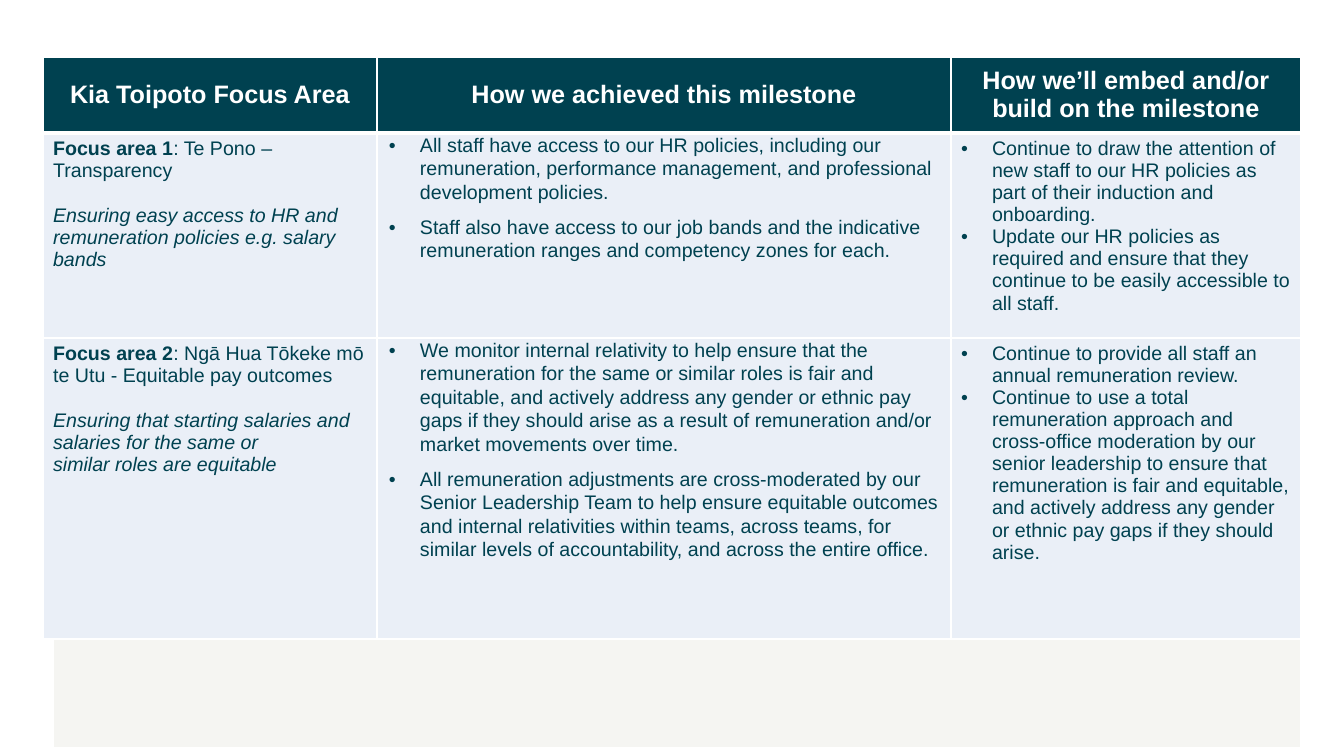
"""Build the Kia Toipoto milestones slide: a three-column table above a pale band."""
from lxml import etree
from pptx import Presentation
from pptx import util as u
from pptx.dml.color import RGBColor
from pptx.enum import shapes, text
from pptx.oxml.ns import qn

PX = 914400 / 100.8
TEAL = RGBColor(0x00, 0x41, 0x50)
WHITE = RGBColor(0xFF, 0xFF, 0xFF)
PALE_BLUE = RGBColor(0xEA, 0xEF, 0xF7)
PALE_GREY = RGBColor(0xF5, 0xF5, 0xF2)

HEADER = {"size": u.Pt(18), "bold": True, "italic": False}
PLAIN = {"size": u.Pt(14), "bold": False, "italic": False}
BOLD = {**PLAIN, "bold": True}
ITALIC = {**PLAIN, "italic": True}
CENTRED = {"alignment": text.PP_ALIGN.CENTER}
AFTER_GAP = {"space_before": u.Pt(16)}
LOOSE = {"line_spacing": 1.07, "space_after": u.Pt(8)}

COLUMN_WIDTHS = [334, 574, 350]
ROW_HEIGHTS = [76, 205, 301]
HEADINGS = [
    "Kia Toipoto Focus Area",
    "How we achieved this milestone",
    "How we’ll embed and/or build on the milestone",
]
FOCUS_AREAS = [
    {
        "name": "Focus area 1",
        "title": ": Te Pono – Transparency",
        "aims": ["Ensuring easy access to HR and remuneration policies e.g. salary bands"],
        "achieved": [
            "All staff have access to our HR policies, including our remuneration, "
            "performance management, and professional development policies.",
            "Staff also have access to our job bands and the indicative remuneration "
            "ranges and competency zones for each.",
        ],
        "next": [
            "Continue to draw the attention of new staff to our HR policies as part of "
            "their induction and onboarding.",
            "Update our HR policies as required and ensure that they continue to be "
            "easily accessible to all staff.",
        ],
    },
    {
        "name": "Focus area 2",
        "title": ": Ngā Hua Tōkeke mō te Utu - Equitable pay outcomes",
        "aims": [
            "Ensuring that starting salaries and salaries for the same or",
            "similar roles are equitable",
        ],
        "achieved": [
            "We monitor internal relativity to help ensure that the remuneration for the "
            "same or similar roles is fair and equitable, and actively address any gender "
            "or ethnic pay gaps if they should arise as a result of remuneration and/or "
            "market movements over time.",
            "All remuneration adjustments are cross-moderated by our Senior Leadership "
            "Team to help ensure equitable outcomes and internal relativities within "
            "teams, across teams, for similar levels of accountability, and across the "
            "entire office.",
        ],
        "next": [
            "Continue to provide all staff an annual remuneration review.",
            "Continue to use a total remuneration approach and cross-office moderation by "
            "our senior leadership to ensure that remuneration is fair and equitable, and "
            "actively address any gender or ethnic pay gaps if they should arise.",
        ],
    },
]


def px(length):
    return u.Emu(round(length * PX))


def write_cell(cell, paragraphs, colour, bulleted=False):
    for index, (runs, layout) in enumerate(paragraphs):
        frame = cell.text_frame
        paragraph = frame.add_paragraph() if index else frame.paragraphs[0]
        if bulleted:
            properties = paragraph._p.get_or_add_pPr()
            properties.set("marL", str(px(31)))
            properties.set("indent", str(-px(31)))
            etree.SubElement(properties, qn("a:buFont"), typeface="Arial")
            etree.SubElement(properties, qn("a:buChar"), char="•")
        for name, value in layout.items():
            setattr(paragraph, name, value)
        for words, style in runs:
            run = paragraph.add_run()
            run.text = words
            for name, value in {"name": "Arial", **style}.items():
                setattr(run.font, name, value)
            run.font.color.rgb = colour


presentation = Presentation()
presentation.slide_width = px(1344)
presentation.slide_height = px(756)
slide = presentation.slides.add_slide(presentation.slide_layouts[6])

band = slide.shapes.add_shape(
    shapes.MSO_SHAPE.RECTANGLE, px(54), px(631), px(1246), px(116))
band.shadow.inherit = False
band.fill.solid()
band.fill.fore_color.rgb = PALE_GREY
band.line.fill.background()

table = slide.shapes.add_table(
    len(ROW_HEIGHTS), len(COLUMN_WIDTHS), px(43), px(57),
    px(sum(COLUMN_WIDTHS)), px(sum(ROW_HEIGHTS))).table
for column, width in zip(table.columns, COLUMN_WIDTHS):
    column.width = px(width)
for row, height in zip(table.rows, ROW_HEIGHTS):
    row.height = px(height)

for row_index, row in enumerate(table.rows):
    for cell in row.cells:
        cell.fill.solid()
        cell.fill.fore_color.rgb = PALE_BLUE if row_index else TEAL
        thick_side = {0: "lnB", 1: "lnT"}.get(row_index)
        properties = cell._tc.get_or_add_tcPr()
        for position, side in enumerate(["lnL", "lnR", "lnT", "lnB"]):
            width = u.Pt(3 if side == thick_side else 1)
            border = etree.Element(qn(f"a:{side}"), w=str(width))
            fill = etree.SubElement(border, qn("a:solidFill"))
            etree.SubElement(fill, qn("a:srgbClr"), val=str(WHITE))
            properties.insert(position, border)

for cell, heading in zip(table.rows[0].cells, HEADINGS):
    cell.vertical_anchor = text.MSO_ANCHOR.MIDDLE
    write_cell(cell, [([(heading, HEADER)], CENTRED)], WHITE)

for row_index, area in enumerate(FOCUS_AREAS, start=1):
    focus_cell, achieved_cell, next_cell = table.rows[row_index].cells
    focus = [([(area["name"], BOLD), (area["title"], PLAIN)], {})]
    focus += [([(aim, ITALIC)], {} if index else AFTER_GAP)
              for index, aim in enumerate(area["aims"])]
    write_cell(focus_cell, focus, TEAL)

    margins = {"margin_left": 12, "margin_right": 12, "margin_top": 0, "margin_bottom": 0}
    for name, value in margins.items():
        setattr(achieved_cell, name, px(value))
    for cell, key, layout in [(achieved_cell, "achieved", LOOSE), (next_cell, "next", {})]:
        points = [([(point, PLAIN)], layout) for point in area[key]]
        write_cell(cell, points, TEAL, bulleted=True)

presentation.save("out.pptx")
